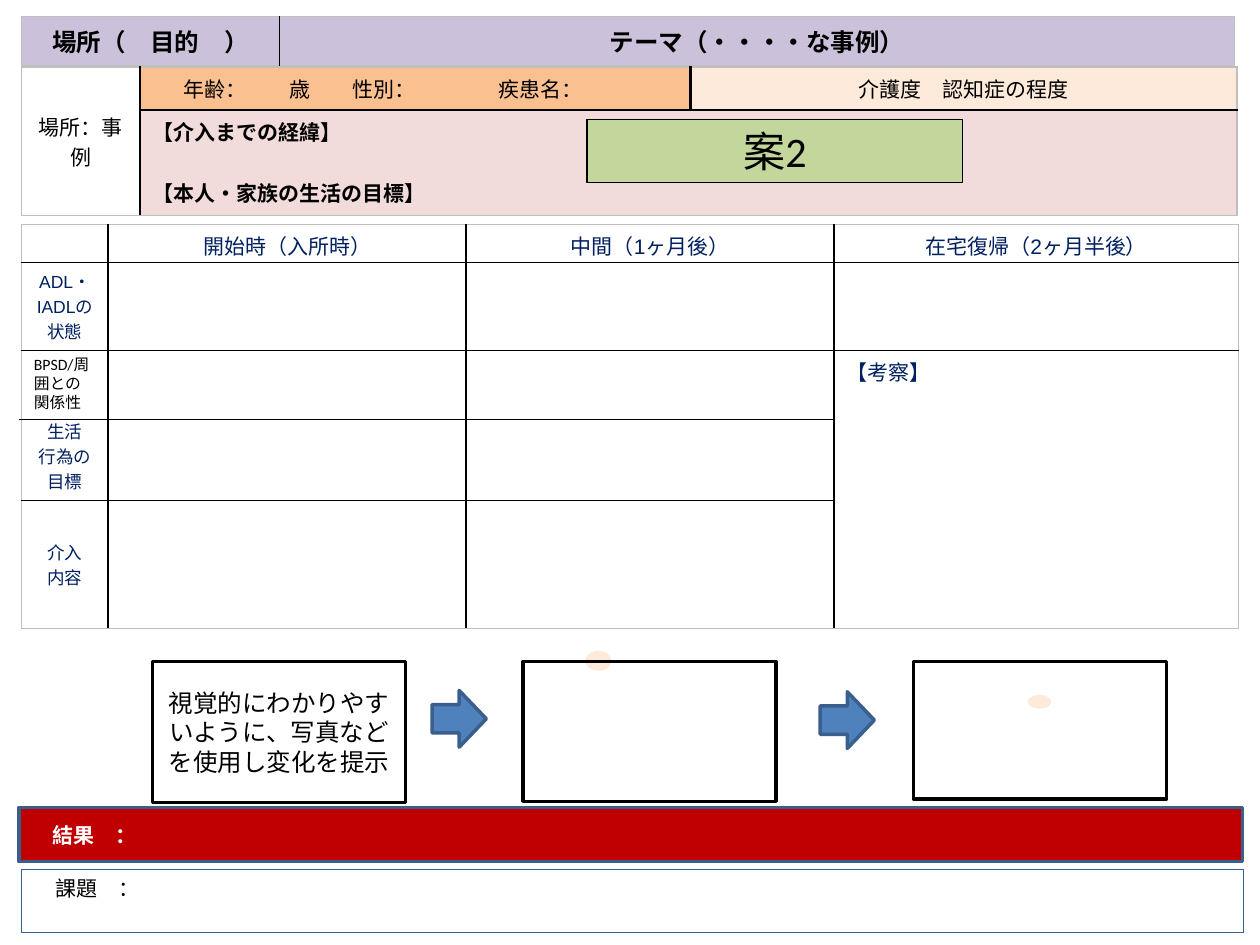
from dataclasses import dataclass

from lxml.etree import SubElement
from pptx import Presentation
from pptx.dml.color import RGBColor
from pptx.enum.shapes import MSO_CONNECTOR, MSO_SHAPE
from pptx.enum.text import MSO_ANCHOR, PP_ALIGN
from pptx.oxml.ns import qn
from pptx.util import Inches, Pt


@dataclass(frozen=True)
class Theme:
    black: str = "000000"
    white: str = "FFFFFF"
    navy: str = "002060"
    frame: str = "BFBFBF"
    lilac: str = "CCC1DA"
    orange: str = "FAC090"
    cream: str = "FDEADA"
    pink: str = "F2DCDB"
    green: str = "C3D69B"
    red: str = "C00000"
    blue: str = "4F81BD"
    dark_blue: str = "3A5F8C"
    outline_blue: str = "376092"
    display: int = 24
    heading: int = 14
    body: int = 12
    label: int = 10
    note: int = 9


class CaseSheet:
    def __init__(self, slide, theme):
        self.slide = slide
        self.theme = theme

    def set_text(self, frame, text, size, color=None, font="Calibri", bold=False,
                 align=PP_ALIGN.CENTER, gap=0, tabs=()):
        frame.text = text
        frame.word_wrap = True
        for index, paragraph in enumerate(frame.paragraphs):
            paragraph.alignment = align
            if index and gap:
                paragraph.space_before = Pt(gap)
            if tabs:
                stops = SubElement(paragraph._p.get_or_add_pPr(), qn("a:tabLst"))
                for stop in tabs:
                    SubElement(stops, qn("a:tab"), pos=str(Inches(stop)), algn="l")
            for run in paragraph.runs:
                run.font.size = Pt(size)
                run.font.name = font
                run.font.bold = bold
                run.font.color.rgb = RGBColor.from_string(color or self.theme.black)

    def table(self, left, top, columns, rows, merges=()):
        frame = self.slide.shapes.add_table(
            len(rows), len(columns), Inches(left), Inches(top),
            Inches(sum(columns)), Inches(sum(rows)))
        table = frame.table
        table.first_row = table.horz_banding = False
        for column, width in zip(table.columns, columns):
            column.width = Inches(width)
        for row, height in zip(table.rows, rows):
            row.height = Inches(height)
        for start, end in merges:
            table.cell(*start).merge(table.cell(*end))
        for cell in table.iter_cells():
            cell.fill.background()
            # Keeps empty cells from stretching their rows
            SubElement(cell.text_frame.paragraphs[0]._p, qn("a:endParaRPr"),
                       sz=str(self.theme.label * 100))
        return table

    def borders(self, table, across, down):
        """Grey outer frame, black inner rules of the given widths."""
        last_row, last_column = len(table.rows), len(table.columns)
        for r in range(last_row):
            for c in range(last_column):
                cell = table.cell(r, c)
                if cell.is_spanned:
                    continue
                bottom = r + (cell.span_height if cell.is_merge_origin else 1)
                right = c + (cell.span_width if cell.is_merge_origin else 1)
                edges = (("a:lnL", c == 0, down), ("a:lnR", right == last_column, down),
                         ("a:lnT", r == 0, across), ("a:lnB", bottom == last_row, across))
                properties = cell._tc.get_or_add_tcPr()
                for position, (tag, outer, width) in enumerate(edges):
                    line = properties.makeelement(qn(tag), w=str(Pt(1 if outer else width)))
                    fill = SubElement(line, qn("a:solidFill"))
                    SubElement(fill, qn("a:srgbClr"),
                               val=self.theme.frame if outer else self.theme.black)
                    properties.insert(position, line)

    def cell(self, table, row, column, text, size, fill=None,
             anchor=MSO_ANCHOR.TOP, **style):
        cell = table.cell(row, column)
        cell.vertical_anchor = anchor
        if fill:
            cell.fill.solid()
            cell.fill.fore_color.rgb = RGBColor.from_string(fill)
        self.set_text(cell.text_frame, text, size, **style)
        return cell

    def shape(self, kind, left, top, width, height, line, weight, fill=None):
        shape = self.slide.shapes.add_shape(
            kind, Inches(left), Inches(top), Inches(width), Inches(height))
        shape.shadow.inherit = False
        if fill:
            shape.fill.solid()
            shape.fill.fore_color.rgb = RGBColor.from_string(fill)
        else:
            shape.fill.background()
        shape.line.color.rgb = RGBColor.from_string(line)
        shape.line.width = Pt(weight)
        return shape

    def box(self, left, top, width, height, text, size, line, weight, fill=None,
            anchor=MSO_ANCHOR.TOP, inset=0.1, **style):
        box = self.shape(MSO_SHAPE.RECTANGLE, left, top, width, height, line, weight, fill)
        box.text_frame.vertical_anchor = anchor
        box.text_frame.margin_left = Inches(inset)
        self.set_text(box.text_frame, text, size, **style)

    def rule(self, left, right, y):
        rule = self.slide.shapes.add_connector(
            MSO_CONNECTOR.STRAIGHT, Inches(left), Inches(y), Inches(right), Inches(y))
        rule.line.color.rgb = RGBColor.from_string(self.theme.black)
        rule.line.width = Pt(0.75)
        SubElement(rule._element.spPr, qn("a:effectLst"))

    def text(self, left, top, width, height, text, size, **style):
        box = self.slide.shapes.add_textbox(
            Inches(left), Inches(top), Inches(width), Inches(height))
        self.set_text(box.text_frame, text, size, **style)


def main():
    presentation = Presentation()
    presentation.slide_width, presentation.slide_height = Inches(10), Inches(7.5)
    theme = Theme()
    sheet = CaseSheet(presentation.slides.add_slide(presentation.slide_layouts[6]), theme)
    middle = MSO_ANCHOR.MIDDLE

    # Case profile
    profile = sheet.table(0.17, 0.53, (0.94, 4.37, 4.34), (0.34, 0.84),
                          merges=[((0, 0), (1, 0)), ((1, 1), (1, 2))])
    sheet.cell(profile, 0, 0, "場所：事例", theme.body, anchor=middle)
    person = sheet.cell(profile, 0, 1, "年齢：\t歳\t性別：\t疾患名：", theme.body, theme.orange,
                        middle, font="Arial", align=PP_ALIGN.LEFT, tabs=(0.84, 1.34, 2.5))
    person.margin_left = Inches(0.35)
    sheet.cell(profile, 0, 2, "介護度　認知症の程度", theme.body, theme.cream, font="Arial")
    sheet.cell(profile, 1, 1, "【介入までの経緯】\n【本人・家族の生活の目標】", theme.body,
               theme.pink, font="Arial", bold=True, align=PP_ALIGN.LEFT, gap=17.4)
    sheet.borders(profile, across=1.5, down=1.5)

    # Title band
    title = sheet.table(0.17, 0.13, (2.05, 7.58), (0.39,))
    for column, heading in enumerate(("場所（　目的　）", "テーマ（・・・・な事例）")):
        sheet.cell(title, 0, column, heading, theme.heading, theme.lilac, bold=True)
    sheet.borders(title, across=1, down=0.75)

    # Result and remaining issues
    sheet.box(0.15, 6.41, 9.71, 0.43, "結果　：", theme.body, theme.dark_blue, 2, theme.red,
              middle, 0.27, color=theme.white, font="Arial", bold=True, align=PP_ALIGN.LEFT)
    sheet.box(0.17, 6.9, 9.7, 0.5, "課題　：", theme.body, theme.outline_blue, 0.75,
              inset=0.27, font="Arial", align=PP_ALIGN.LEFT)

    # Progress over time
    progress = sheet.table(0.17, 1.78, (0.69, 2.84, 2.92, 3.21), (0.3, 0.7, 1.19, 1.02),
                           merges=[((2, 3), (3, 3))])
    navy = {"color": theme.navy, "font": "Arial"}
    stages = ("開始時（入所時）", "中間（1ヶ月後）", "在宅復帰（2ヶ月半後）")
    for column, stage in enumerate(stages, 1):
        sheet.cell(progress, 0, column, stage, theme.body, **navy).margin_bottom = 0
    aspects = (("ADL・IADLの\n状態", middle), ("生活\n行為の\n目標", MSO_ANCHOR.BOTTOM),
               ("介入\n内容", middle))
    for row, (aspect, anchor) in enumerate(aspects, 1):
        sheet.cell(progress, row, 0, aspect, theme.label, anchor=anchor, **navy)
    sheet.cell(progress, 2, 3, "【考察】", theme.body, align=PP_ALIGN.LEFT, **navy)
    sheet.borders(progress, across=0.75, down=1.5)

    # Arrows and pale spots between the photo frames
    for left, top in ((3.43, 5.48), (6.51, 5.49)):
        sheet.shape(MSO_SHAPE.RIGHT_ARROW, left, top, 0.43, 0.45,
                    theme.dark_blue, 2, theme.blue)
    for spot in ((4.66, 5.18, 0.18, 0.13), (8.17, 5.53, 0.16, 0.08)):
        sheet.shape(MSO_SHAPE.OVAL, *spot, theme.cream, 2, theme.cream)

    # Photo frames
    sheet.box(1.21, 5.25, 2.01, 1.12, "視覚的にわかりやすいように、写真などを使用し変化を提示",
              theme.heading, theme.black, 2, anchor=middle)
    for left, height in ((4.15, 1.11), (7.25, 1.09)):
        sheet.shape(MSO_SHAPE.RECTANGLE, left, 5.25, 2.01, height, theme.black, 2)

    # Extra progress row
    sheet.rule(0.15, 6.61, 3.33)
    sheet.text(0.17, 2.77, 0.68, 0.56, "BPSD/周囲との関係性", theme.note, align=PP_ALIGN.LEFT)

    # Draft tag
    sheet.box(4.66, 0.95, 2.98, 0.5, "案2", theme.display, theme.black, 0.75, theme.green)

    presentation.save("out.pptx")


if __name__ == "__main__":
    main()
